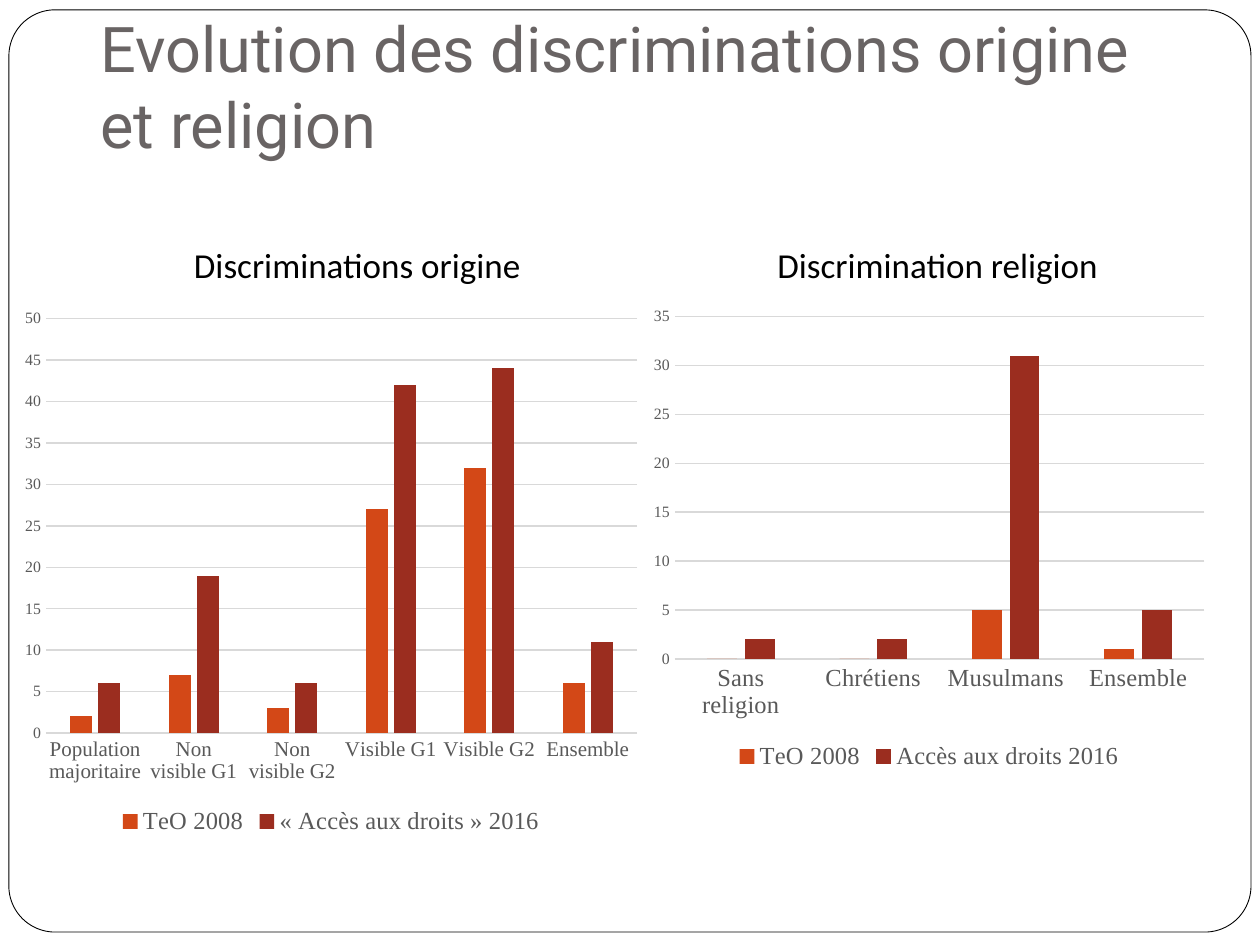
from pptx import Presentation
from pptx.chart.data import CategoryChartData
from pptx.dml.color import RGBColor
from pptx.enum.chart import XL_CHART_TYPE, XL_LEGEND_POSITION, XL_TICK_MARK
from pptx.enum.shapes import MSO_SHAPE
from pptx.enum.text import MSO_ANCHOR, MSO_AUTO_SIZE, PP_ALIGN
from pptx.util import Cm, Pt

COLORS = {
    "white": "FFFFFF",
    "black": "000000",
    "title": "696464",
    "label": "595959",
    "grid": "D9D9D9",
    "survey_2008": "D34817",
    "survey_2016": "9B2D1F",
}
CHART_FONT = "Times New Roman"

# The origin chart is wide enough to keep "majoritaire" on one line
ORIGIN = {
    "heading": ("Discriminations origine", (3.66, 4.78, 7.16, 1.12)),
    "box": (0.25, 6.02, 12.85, 10.92),
    "categories": ["Population majoritaire", "Non visible G1", "Non visible G2",
                   "Visible G1", "Visible G2", "Ensemble"],
    "series": {"TeO 2008": (2, 7, 3, 27, 32, 6),
               "« Accès aux droits » 2016": (6, 19, 6, 42, 44, 11)},
    "category_size": 12,
    "scale_max": 50,
}
RELIGION = {
    "heading": ("Discrimination religion", (15.42, 4.78, 7.04, 1.12)),
    "box": (12.95, 6, 11.56, 9.63),
    "categories": ["Sans religion", "Chrétiens", "Musulmans", "Ensemble"],
    "series": {"TeO 2008": (0, 0, 5, 1),
               "Accès aux droits 2016": (2, 2, 31, 5)},
    "category_size": 14,
    "scale_max": 35,
}


def color(key):
    return RGBColor.from_string(COLORS[key])


def lengths(box):
    return [Cm(value) for value in box]


def apply_format(target, values):
    for attribute, value in values.items():
        setattr(target, attribute, value)


def format_font(font, name, size, color_key):
    apply_format(font, {"name": name, "size": Pt(size), "bold": False})
    font.color.rgb = color(color_key)


def format_line(line, color_key, width):
    line.color.rgb = color(color_key)
    line.width = Pt(width)


def add_frame(slide):
    frame = slide.shapes.add_shape(MSO_SHAPE.ROUNDED_RECTANGLE,
                                   *lengths((0.18, 0.2, 25.04, 18.59)))
    frame.adjustments[0] = 0.05
    frame.shadow.inherit = False
    frame.fill.solid()
    frame.fill.fore_color.rgb = color("white")
    format_line(frame.line, "black", 0.5)
    # Behind the title, right after the two group property elements
    slide.shapes._spTree.insert(2, frame._element)


def set_title(slide, text):
    title = slide.shapes.title
    apply_format(title, dict(zip(("left", "top", "width", "height"),
                                 lengths((1.77, 1.37, 21.9, 2.13)))))
    apply_format(title.text_frame, {
        "text": text,
        "word_wrap": True,
        "auto_size": MSO_AUTO_SIZE.NONE,
        "vertical_anchor": MSO_ANCHOR.BOTTOM,
        "margin_bottom": Cm(0.25),
    })
    paragraph = title.text_frame.paragraphs[0]
    paragraph.alignment = PP_ALIGN.LEFT
    format_font(paragraph.runs[0].font, "Roboto", 36, "title")


def add_heading(slide, text, box):
    heading = slide.shapes.add_textbox(*lengths(box)).text_frame
    apply_format(heading, {"text": text, "word_wrap": False,
                           "auto_size": MSO_AUTO_SIZE.SHAPE_TO_FIT_TEXT})
    format_font(heading.paragraphs[0].runs[0].font, "Calibri", 20, "black")


def format_axes(chart, category_size, scale_max):
    for axis, size in ((chart.category_axis, category_size), (chart.value_axis, 9)):
        apply_format(axis, {"major_tick_mark": XL_TICK_MARK.NONE,
                            "minor_tick_mark": XL_TICK_MARK.NONE})
        format_font(axis.tick_labels.font, CHART_FONT, size, "label")
    format_line(chart.category_axis.format.line, "grid", 0.75)
    apply_format(chart.value_axis, {"minimum_scale": 0, "maximum_scale": scale_max,
                                    "major_unit": 5, "has_major_gridlines": True})
    chart.value_axis.format.line.fill.background()
    format_line(chart.value_axis.major_gridlines.format.line, "grid", 0.75)


def add_survey_chart(slide, content):
    data = CategoryChartData()
    data.categories = content["categories"]
    for name, values in content["series"].items():
        data.add_series(name, values)
    chart = slide.shapes.add_chart(XL_CHART_TYPE.COLUMN_CLUSTERED,
                                   *lengths(content["box"]), data).chart
    apply_format(chart, {"has_title": False, "has_legend": True})
    format_font(chart.font, CHART_FONT, 10, "black")

    # Columns
    columns = chart.plots[0]
    apply_format(columns, {"gap_width": 219, "overlap": -27, "vary_by_categories": False})
    for survey, key in zip(columns.series, ("survey_2008", "survey_2016")):
        survey.invert_if_negative = False
        survey.format.fill.solid()
        survey.format.fill.fore_color.rgb = color(key)

    # Axes and legend
    format_axes(chart, content["category_size"], content["scale_max"])
    apply_format(chart.legend, {"position": XL_LEGEND_POSITION.BOTTOM,
                                "include_in_layout": False})
    format_font(chart.legend.font, CHART_FONT, 14, "label")


def main():
    presentation = Presentation()
    apply_format(presentation, {"slide_width": Cm(25.4), "slide_height": Cm(19.05)})
    slide = presentation.slides.add_slide(presentation.slide_layouts[5])

    add_frame(slide)
    set_title(slide, "Evolution des discriminations origine et religion")
    for content in (ORIGIN, RELIGION):
        add_survey_chart(slide, content)
        add_heading(slide, *content["heading"])

    presentation.save("out.pptx")


if __name__ == "__main__":
    main()
